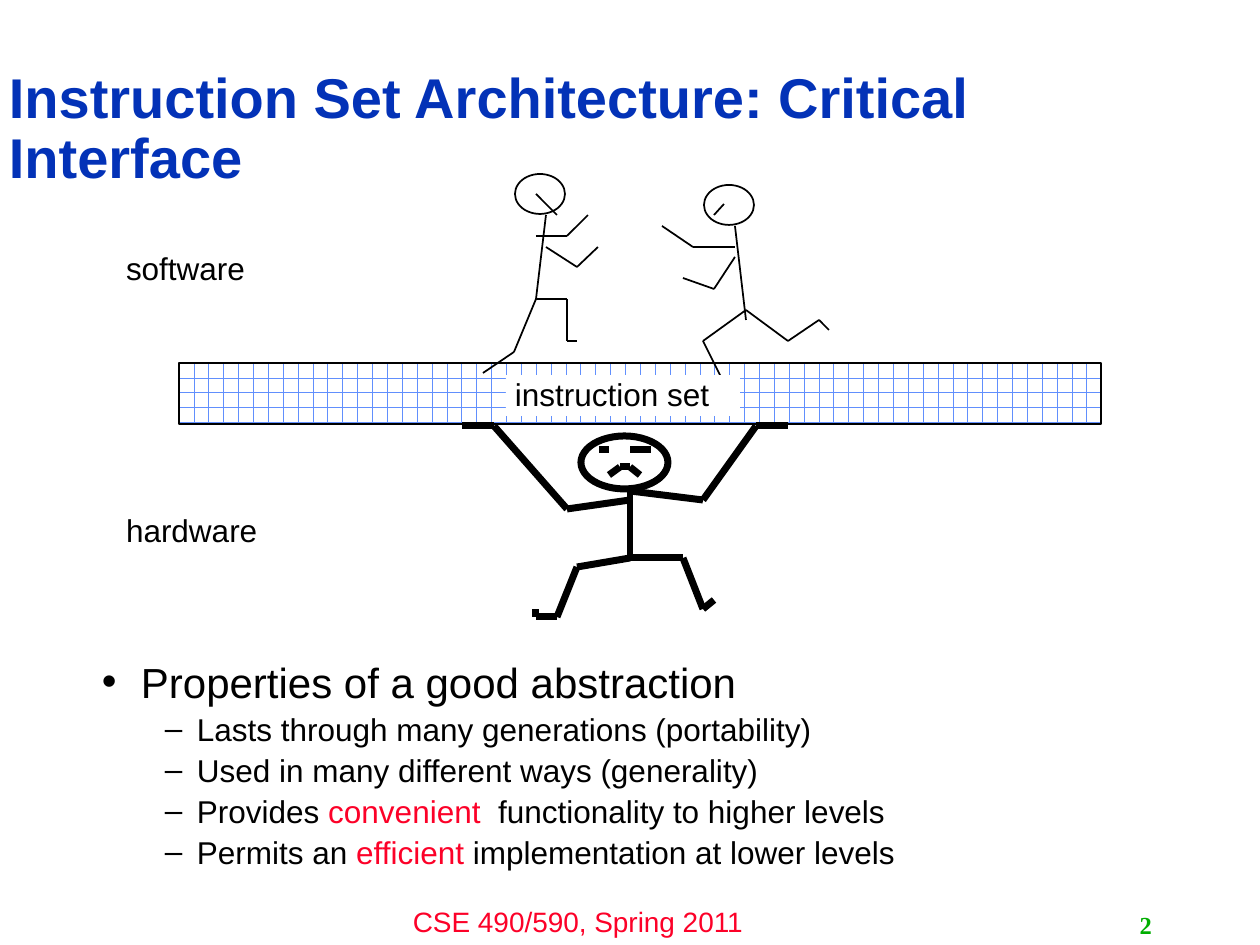
from itertools import pairwise

from lxml.etree import SubElement
from pptx import Presentation
from pptx.dml.color import RGBColor
from pptx.enum.dml import MSO_PATTERN
from pptx.enum.shapes import MSO_CONNECTOR, MSO_SHAPE
from pptx.enum.text import MSO_ANCHOR, PP_ALIGN
from pptx.oxml.ns import qn
from pptx.util import Pt

EMU_PER_PX = 914400 / 126

BLACK = RGBColor(0x00, 0x00, 0x00)
WHITE = RGBColor(0xFF, 0xFF, 0xFF)
BLUE = RGBColor(0x03, 0x32, 0xB7)
BRICK_BLUE = RGBColor(0x61, 0x8F, 0xFD)
RED = RGBColor(0xFC, 0x01, 0x28)
GREEN = RGBColor(0x00, 0xAE, 0x00)

# Stick figures: a head box and chains of joints
LEFT_RUNNER = {
    "head": (515, 174, 50, 40),
    "limbs": [
        [(546, 215), (536, 299), (567, 299), (567, 341), (577, 341)],
        [(536, 299), (514, 352), (483, 373)],
        [(546, 247), (577, 267), (598, 247)],
        [(536, 236), (567, 236), (588, 215)],
        [(557, 215), (536, 194)],
    ],
}
RIGHT_RUNNER = {
    "head": (704, 185, 50, 40),
    "limbs": [
        [(735, 226), (746, 320)],
        [(746, 310), (703, 341), (724, 383)],
        [(746, 310), (788, 341), (819, 320), (829, 330)],
        [(735, 257), (714, 289), (683, 278)],
        [(735, 247), (693, 247), (662, 226)],
        [(714, 215), (724, 204)],
    ],
}
CARRIER = {
    "head": (581, 436, 87, 53),
    "limbs": [
        [(609, 475), (620, 467), (630, 467), (640, 475)],
        [(630, 450), (651, 450)],
        [(609, 450), (599, 450)],
        [(630, 491), (630, 558), (683, 558), (703, 609), (714, 600)],
        [(630, 558), (577, 567), (557, 617), (536, 617), (536, 609)],
        [(630, 491), (703, 500), (756, 426), (788, 426)],
        [(630, 500), (567, 509), (494, 426), (462, 426)],
    ],
}

# Each line is a list of (text, colour) runs
PROPERTIES = [
    [("Lasts through many generations (portability)", BLACK)],
    [("Used in many different ways (generality)", BLACK)],
    [("Provides ", BLACK), ("convenient", RED),
     ("  functionality to higher levels", BLACK)],
    [("Permits an ", BLACK), ("efficient", RED),
     (" implementation at lower levels", BLACK)],
]


def px(n):
    return round(n * EMU_PER_PX)


def add_runs(p, runs, size, font="Arial", bold=False):
    for text, color in runs:
        r = p.add_run()
        r.text = text
        r.font.color.rgb = color
        for name, value in {"size": Pt(size), "name": font, "bold": bold}.items():
            setattr(r.font, name, value)


def add_box(s, box, inset=(9, 4), anchor=MSO_ANCHOR.TOP):
    sp = s.shapes.add_textbox(*map(px, box))
    tf = sp.text_frame
    x, y = map(px, inset)
    frame = {"margin_left": x, "margin_right": x, "margin_top": y,
             "margin_bottom": y, "word_wrap": True, "vertical_anchor": anchor}
    for name, value in frame.items():
        setattr(tf, name, value)
    return sp


def add_label(s, box, text, size, color=BLACK, spacing=1.0, align=PP_ALIGN.LEFT,
              font="Arial", bold=False, **frame):
    sp = add_box(s, box, **frame)
    p = sp.text_frame.paragraphs[0]
    p.alignment = align
    p.line_spacing = spacing
    add_runs(p, [(text, color)], size, font, bold)
    return sp


def add_bullet(p, runs, size, char, left, hang, before):
    pPr = p._p.get_or_add_pPr()
    pPr.set("marL", str(px(left)))
    pPr.set("indent", str(-px(hang)))
    SubElement(pPr, qn("a:buFont")).set("typeface", "Arial")
    SubElement(pPr, qn("a:buChar")).set("char", char)
    p.line_spacing = 0.8
    p.space_before = Pt(before)
    add_runs(p, runs, size)


def add_outline(shapes, kind, box, weight):
    sp = shapes.add_shape(kind, *map(px, box))
    sp.shadow.inherit = False
    sp.fill.background()
    sp.line.color.rgb = BLACK
    sp.line.width = Pt(weight)
    return sp


def add_figure(shapes, figure, weight):
    add_outline(shapes, MSO_SHAPE.OVAL, figure["head"], weight)
    for limb in figure["limbs"]:
        for start, end in pairwise(limb):
            line = shapes.add_connector(MSO_CONNECTOR.STRAIGHT,
                                        *map(px, start + end))
            line.line.color.rgb = BLACK
            line.line.width = Pt(weight)
            SubElement(line._element.spPr, qn("a:effectLst"))


def main():
    prs = Presentation()
    prs.slide_width, prs.slide_height = px(1260), px(945)
    s = prs.slides.add_slide(prs.slide_layouts[6])

    # Footer, slide number and title
    add_label(s, (368, 898, 420, 47), "CSE 490/590, Spring 2011", 16, RED,
              align=PP_ALIGN.CENTER, inset=(13, 6))
    add_label(s, (903, 905, 262, 40), "2", 14, GREEN, align=PP_ALIGN.RIGHT,
              font="Times New Roman", bold=True, inset=(13, 6),
              anchor=MSO_ANCHOR.MIDDLE)
    add_label(s, (0, 66, 1226, 124),
              "Instruction Set Architecture: Critical Interface",
              32, BLUE, spacing=0.9, bold=True)

    # Instruction set slab
    slab = add_outline(s.shapes, MSO_SHAPE.RECTANGLE, (179, 363, 922, 61), 1)
    slab.fill.patterned()
    slab.fill.pattern = MSO_PATTERN.HORIZONTAL_BRICK
    slab.fill.fore_color.rgb = BRICK_BLUE
    slab.fill.back_color.rgb = WHITE

    # Runners above the slab, carrier below it
    add_figure(s.shapes, LEFT_RUNNER, 1)
    add_figure(s.shapes, RIGHT_RUNNER, 1)
    add_figure(s.shapes.add_group_shape().shapes, CARRIER, 4)

    # Layer labels
    label = add_label(s, (506, 375, 234, 41), "instruction set", 18, spacing=0.92)
    label.fill.solid()
    label.fill.fore_color.rgb = WHITE
    for top, text in ((251, "software"), (513, "hardware")):
        add_label(s, (117, top, 158, 39), text, 18, spacing=0.85)

    # Properties list
    tf = add_box(s, (89, 660, 1058, 237), inset=(13, 6)).text_frame
    add_bullet(tf.paragraphs[0], [("Properties of a good abstraction", BLACK)],
               24, "•", 39, 39, 0)
    for runs in PROPERTIES:
        p = tf.add_paragraph()
        p.level = 1
        add_bullet(p, runs, 18, "–", 95, 32, 6.2)

    prs.save("out.pptx")


if __name__ == "__main__":
    main()
